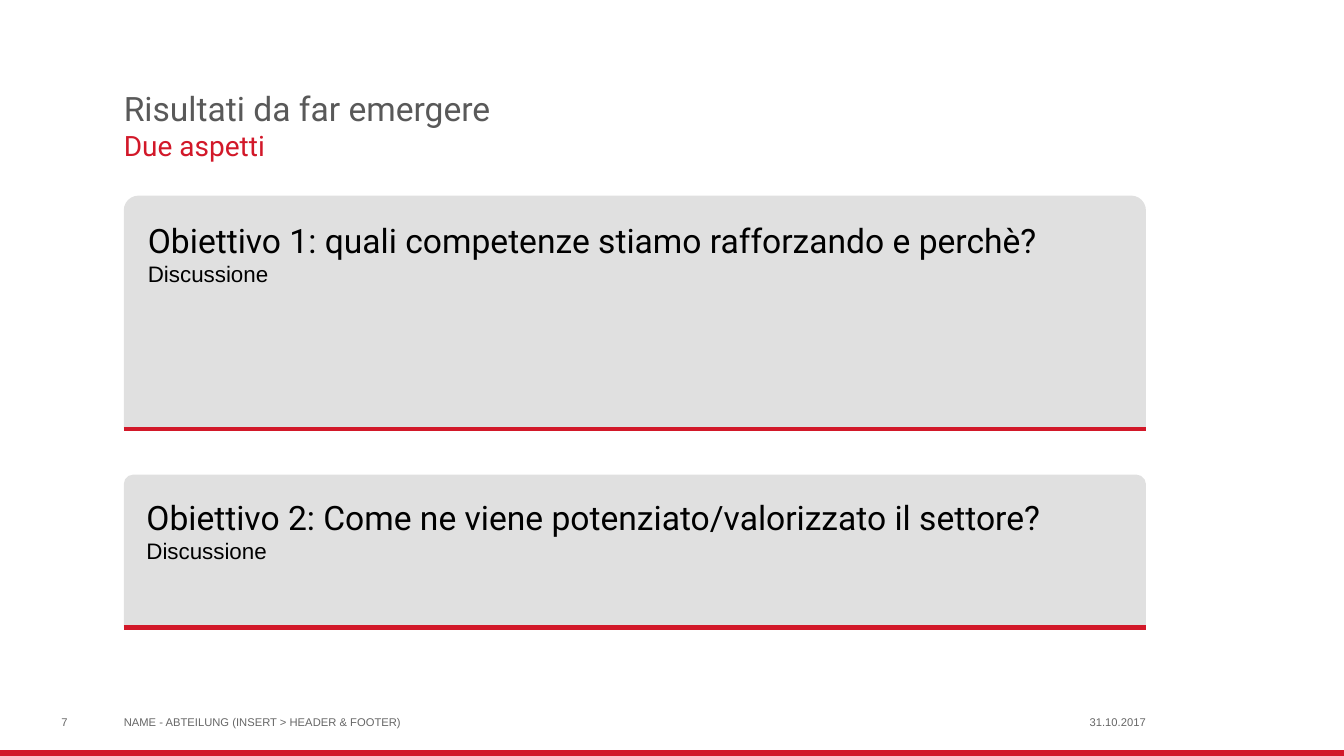
"""Build the slide on the two results to bring out."""
import pptx
import pptx.dml.color
import pptx.enum.shapes
import pptx.enum.text
import pptx.oxml.ns
import pptx.util
from lxml import etree

Cm = pptx.util.Cm
Pt = pptx.util.Pt
ALIGN = pptx.enum.text.PP_ALIGN
ANCHOR = pptx.enum.text.MSO_ANCHOR
SHAPE = pptx.enum.shapes.MSO_SHAPE


def rgb(code):
    return pptx.dml.color.RGBColor.from_string(code)


def write(frame, text, size, color, font="Roboto", align=ALIGN.LEFT, first=True, **spacing):
    paragraph = frame.paragraphs[0] if first else frame.add_paragraph()
    paragraph.alignment = align
    for name, value in spacing.items():
        setattr(paragraph, name, value)
    run = paragraph.add_run()
    run.text = text
    run.font.name = font
    run.font.size = Pt(size)
    run.font.color.rgb = rgb(color)


class Deck:
    red, grey, panel_grey, footer_grey, black = "D21829", "595959", "E0E0E0", "666666", "000000"
    left, panel_width = 3.12, 25.76

    def __init__(self, width, height):
        self.presentation = pptx.Presentation()
        self.presentation.slide_width = Cm(width)
        self.presentation.slide_height = Cm(height)
        self.slide = self.presentation.slides.add_slide(self.presentation.slide_layouts[6])

    def frame(self, shape, inset, anchor):
        frame = shape.text_frame
        frame.word_wrap = True
        frame.vertical_anchor = anchor
        frame.margin_left = frame.margin_right = Cm(inset)
        frame.margin_top = frame.margin_bottom = Cm(inset)
        return frame

    def text(self, box, text, size, color, anchor=ANCHOR.BOTTOM, **style):
        label = self.slide.shapes.add_textbox(*map(Cm, box))
        write(self.frame(label, 0, anchor), text, size, color, **style)

    def footer(self, left, width, text, align=ALIGN.LEFT):
        self.text((left, 17.86, width, 0.51), text, 8, self.footer_grey, font="Arial", align=align)

    def shape(self, kind, box, fill):
        shape = self.slide.shapes.add_shape(kind, *map(Cm, box))
        shape.shadow.inherit = False
        shape.fill.solid()
        shape.fill.fore_color.rgb = rgb(fill)
        shape.line.fill.background()
        return shape

    def rule(self, top):
        rule = self.slide.shapes.add_connector(
            pptx.enum.shapes.MSO_CONNECTOR.STRAIGHT,
            Cm(self.left), Cm(top), Cm(self.left + self.panel_width), Cm(top))
        rule.line.color.rgb = rgb(self.red)
        rule.line.width = Pt(3)
        etree.SubElement(rule._element.spPr, pptx.oxml.ns.qn("a:effectLst"))

    def panel(self, top, height, goal):
        panel = self.shape(SHAPE.ROUND_2_SAME_RECTANGLE,
                           (self.left, top, self.panel_width, height), self.panel_grey)
        panel.adjustments[0] = 0.063
        panel.adjustments[1] = 0
        frame = self.frame(panel, 0.5, ANCHOR.TOP)
        write(frame, goal, 24, self.black)
        write(frame, "Discussione", 16, self.black, font="Arial", first=False)
        self.rule(top + height)


def main():
    deck = Deck(33.87, 19.05)
    deck.shape(SHAPE.RECTANGLE, (0, 18.9, 33.87, 0.15), deck.red)
    deck.text((deck.left, 0.66, 29.11, 2.59), "Risultati da far emergere", 24, deck.grey,
              line_spacing=0.9)
    deck.text((deck.left, 3.25, 29.11, 1.04), "Due aspetti", 20, deck.red,
              anchor=ANCHOR.TOP, space_after=Pt(6))
    deck.panel(4.93, 5.89, "Obiettivo 1: quali competenze stiamo rafforzando e perchè?")
    deck.panel(11.96, 3.85, "Obiettivo 2: Come ne viene potenziato/valorizzato il settore?")
    deck.footer(1.55, 1.4, "7")
    deck.footer(deck.left, 23.5, "NAME - ABTEILUNG (INSERT > HEADER & FOOTER)")
    deck.footer(26.8, 2.08, "31.10.2017", align=ALIGN.RIGHT)
    deck.presentation.save("out.pptx")


if __name__ == "__main__":
    main()
